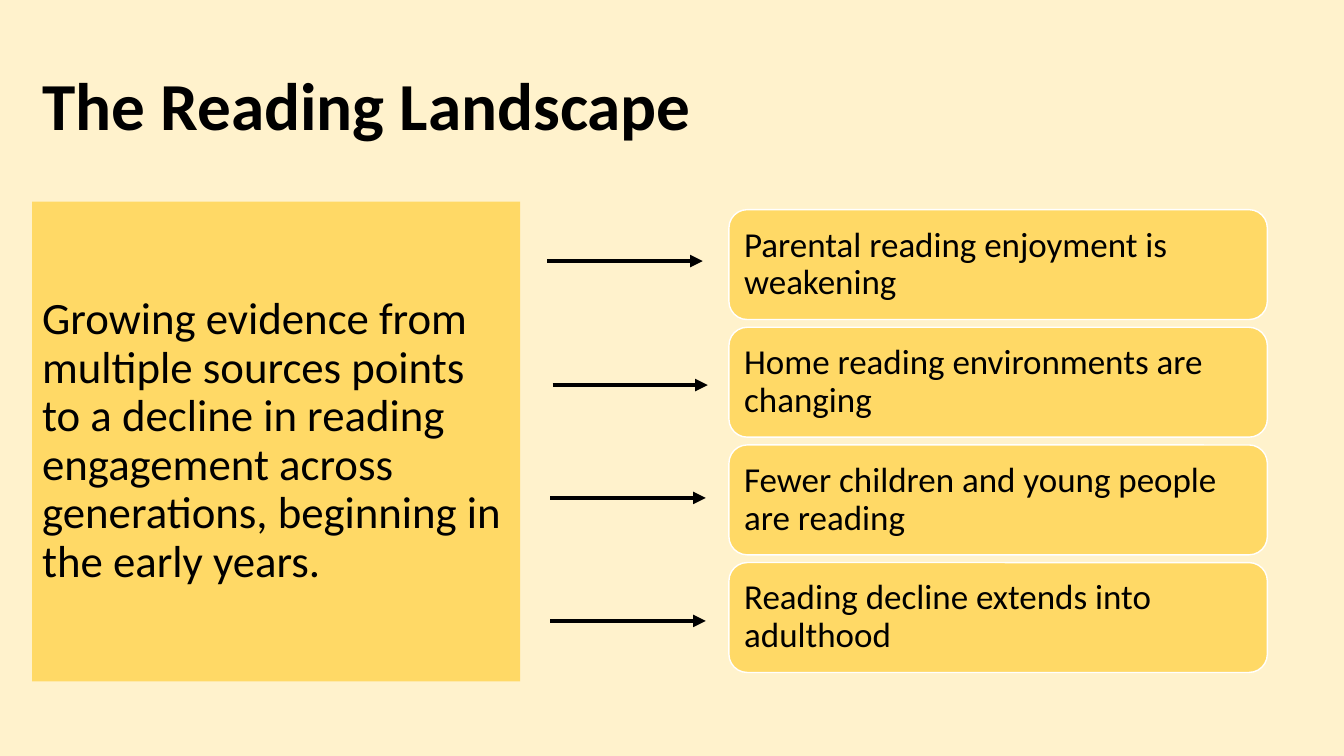
from pptx import Presentation
from pptx.dml.color import RGBColor
from pptx.enum.shapes import MSO_CONNECTOR, MSO_SHAPE
from pptx.enum.text import MSO_ANCHOR, PP_ALIGN
from pptx.oxml.ns import qn
from pptx.util import Inches, Pt
from lxml.etree import SubElement

CREAM = RGBColor(0xFF, 0xF2, 0xCC)
GOLD = RGBColor(0xFF, 0xD9, 0x66)
BLACK = RGBColor(0, 0, 0)
WHITE = RGBColor(0xFF, 0xFF, 0xFF)

EVIDENCE = (
    "Growing evidence from multiple sources points to a decline in reading "
    "engagement across generations, beginning in the early years."
)
FINDINGS = [
    "Parental reading enjoyment is weakening",
    "Home reading environments are changing",
    "Fewer children and young people are reading",
    "Reading decline extends into adulthood",
]
ARROW_STARTS = [(5.43, 2.59), (5.48, 3.82), (5.46, 4.94), (5.46, 6.16)]
ARROW_LENGTH = 1.54
CARD_TOP = 2.08
CARD_PITCH = 1.167


def write_text(shape, text, size, bold=False, inset=0.05):
    """Fill a shape with left-aligned, vertically centred black text."""
    frame = shape.text_frame
    frame.text = text
    frame.word_wrap = True
    frame.vertical_anchor = MSO_ANCHOR.MIDDLE
    frame.margin_left = frame.margin_right = Inches(0.1)
    frame.margin_top = frame.margin_bottom = Inches(inset)
    para = frame.paragraphs[0]
    para.alignment = PP_ALIGN.LEFT
    para.line_spacing = 0.9
    font = para.runs[0].font
    font.name = "Calibri"
    font.size = Pt(size)
    font.bold = bold
    font.color.rgb = BLACK


def add_title(page, text):
    """Add the slide heading."""
    box = page.shapes.add_textbox(Inches(0.32), Inches(0.35), Inches(11.5), Inches(1.45))
    write_text(box, text, 48, bold=True)


def add_panel(page, kind, left, top, width, height):
    """Add a gold shape without outline or shadow."""
    panel = page.shapes.add_shape(
        kind, Inches(left), Inches(top), Inches(width), Inches(height)
    )
    panel.shadow.inherit = False
    panel.fill.solid()
    panel.fill.fore_color.rgb = GOLD
    panel.line.fill.background()
    return panel


def add_finding(page, text, top):
    """Add a rounded card with a white outline holding one finding."""
    card = add_panel(page, MSO_SHAPE.ROUNDED_RECTANGLE, 7.23, top, 5.34, 1.09)
    card.line.color.rgb = WHITE
    card.line.width = Pt(1)
    write_text(card, text, 25, inset=0.1)


def add_arrow(page, left, top):
    """Add a horizontal black arrow pointing right."""
    arrow = page.shapes.add_connector(
        MSO_CONNECTOR.STRAIGHT,
        Inches(left), Inches(top), Inches(left + ARROW_LENGTH), Inches(top),
    )
    arrow.line.color.rgb = BLACK
    arrow.line.width = Pt(3)
    SubElement(arrow.line._get_or_add_ln(), qn("a:tailEnd"), type="triangle")
    SubElement(arrow._element.spPr, qn("a:effectLst"))


def main():
    """Build the slide and save the deck."""
    deck = Presentation()
    deck.slide_width = Inches(13.33)
    deck.slide_height = Inches(7.5)
    page = deck.slides.add_slide(deck.slide_layouts[6])
    page.background.fill.solid()
    page.background.fill.fore_color.rgb = CREAM

    add_title(page, "The Reading Landscape")
    evidence = add_panel(page, MSO_SHAPE.RECTANGLE, 0.32, 2, 4.84, 4.76)
    write_text(evidence, EVIDENCE, 32)
    for left, top in ARROW_STARTS:
        add_arrow(page, left, top)
    for row, finding in enumerate(FINDINGS):
        add_finding(page, finding, CARD_TOP + row * CARD_PITCH)

    deck.save("out.pptx")


if __name__ == "__main__":
    main()
